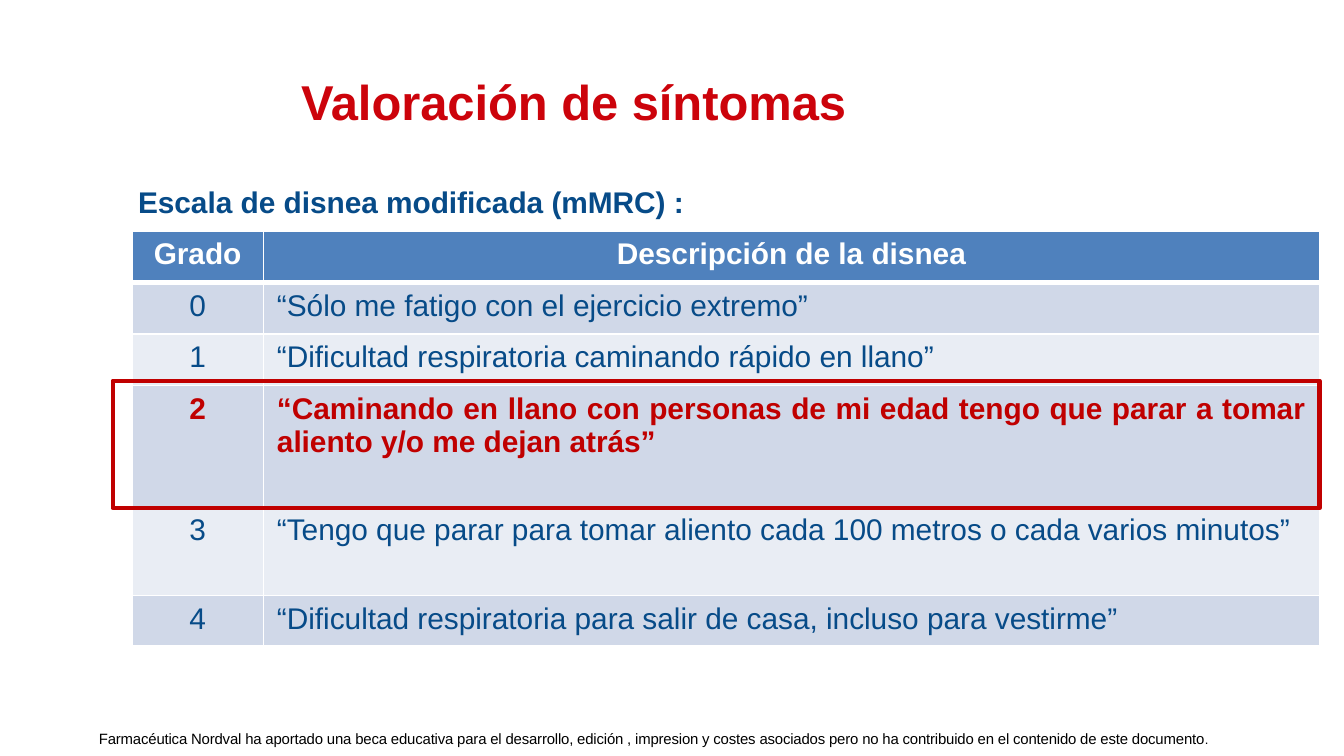
import pptx
import pptx.dml.color
import pptx.enum.shapes
import pptx.enum.text
import pptx.oxml
import pptx.oxml.ns
import pptx.util
from pptx.util import Cm

ALIGN = pptx.enum.text.PP_ALIGN
ANCHOR = pptx.enum.text.MSO_ANCHOR
COLORS = {
    "title": "CC030B",
    "navy": "074B88",
    "alert": "C00000",
    "header": "4F81BD",
    "band_dark": "D0D8E8",
    "band_light": "E9EDF4",
    "white": "FFFFFF",
    "black": "000000",
    "ink": "00050A",
}
HEADER = ("Grado", "Descripción de la disnea")
GRADES = [
    "“Sólo me fatigo con el ejercicio extremo”",
    "“Dificultad respiratoria caminando rápido en llano”",
    "“Caminando en llano con personas de mi edad tengo que parar a tomar "
    "aliento y/o me dejan atrás”",
    "“Tengo que parar para tomar aliento cada 100 metros o cada varios minutos”",
    "“Dificultad respiratoria para salir de casa, incluso para vestirme”",
]
HIGHLIGHTED = 2
COL_WIDTHS = (2.49, 19.96)
ROW_HEIGHTS = (0.97, 0.97, 0.97, 2.29, 1.68, 0.94)


def rgb(name):
    return pptx.dml.color.RGBColor.from_string(COLORS[name])


def style_run(r, size, color, bold=False):
    r.font.name = "Arial"
    r.font.size = pptx.util.Pt(size)
    r.font.bold = bold
    r.font.color.rgb = rgb(color)


def add_text(slide, box, text, size, color, bold=False, wrap=True):
    tf = slide.shapes.add_textbox(*map(Cm, box)).text_frame
    tf.word_wrap = wrap
    tf.text = text
    style_run(tf.paragraphs[0].runs[0], size, color, bold)
    return tf


def add_title(slide, box):
    tf = add_text(slide, box, "Valoración de síntomas", 26.2, "title", bold=True)
    tf.vertical_anchor = ANCHOR.MIDDLE


def add_footer(slide, box):
    text = ("Farmacéutica Nordval ha aportado una beca educativa para el desarrollo, "
            "edición , impresion y costes asociados pero no ha contribuido en el "
            "contenido de este documento")
    tf = add_text(slide, box, text, 8, "black")
    tf.margin_left = tf.margin_right = tf.margin_bottom = 0
    tf.margin_top = Cm(0.06)
    p = tf.paragraphs[0]
    p.alignment = ALIGN.CENTER
    r = p.add_run()
    r.text = "."
    style_run(r, 7, "ink")
    for r in p.runs:
        r.font._element.set("spc", "-10")


def set_borders(cell, widths):
    """Draw white borders; widths maps lnL, lnR, lnT and lnB to points."""
    tcPr = cell._tc.get_or_add_tcPr()
    for i, (tag, width) in enumerate(widths.items()):
        ln = pptx.oxml.parse_xml(
            f'<a:{tag} {pptx.oxml.ns.nsdecls("a")} w="{pptx.util.Pt(width)}">'
            f'<a:solidFill><a:srgbClr val="{COLORS["white"]}"/></a:solidFill></a:{tag}>')
        tcPr.insert(i, ln)


def add_scale_table(slide, box):
    rows = [HEADER] + [(str(i), text) for i, text in enumerate(GRADES)]
    table = slide.shapes.add_table(len(rows), len(HEADER), *map(Cm, box)).table
    for col, width in zip(table.columns, COL_WIDTHS):
        col.width = Cm(width)
    for i, (texts, height) in enumerate(zip(rows, ROW_HEIGHTS)):
        table.rows[i].height = Cm(height)
        is_header, is_key = i == 0, i == HIGHLIGHTED + 1
        fill = "header" if is_header else "band_dark" if i % 2 else "band_light"
        color = "white" if is_header else "alert" if is_key else "navy"
        for j, text in enumerate(texts):
            cell = table.cell(i, j)
            cell.fill.solid()
            cell.fill.fore_color.rgb = rgb(fill)
            set_borders(cell, {"lnL": 1, "lnR": 1, "lnT": 3 if i == 1 else 1,
                               "lnB": 3 if is_header else 1})
            cell.text = text
            p = cell.text_frame.paragraphs[0]
            if is_header or j == 0:
                p.alignment = ALIGN.CENTER
            else:
                p.alignment = ALIGN.JUSTIFY if i > HIGHLIGHTED else ALIGN.LEFT
            style_run(p.runs[0], 16, color, is_header or is_key)


def add_highlight(slide, box):
    sp = slide.shapes.add_shape(
        pptx.enum.shapes.MSO_SHAPE.RECTANGLE, *map(Cm, box))
    sp.shadow.inherit = False
    sp.fill.background()
    sp.line.color.rgb = rgb("alert")
    sp.line.width = pptx.util.Pt(2.25)


def main():
    prs = pptx.Presentation()
    prs.slide_width, prs.slide_height = Cm(25.4), Cm(14.28)
    slide = prs.slides.add_slide(prs.slide_layouts[6])
    add_footer(slide, (1.14, 13.72, 22.43, 0.38))
    add_title(slide, (5.44, 1.12, 19.96, 1.57))
    add_scale_table(slide, (2.49, 4.37, sum(COL_WIDTHS), sum(ROW_HEIGHTS)))
    add_highlight(slide, (2.13, 7.19, 22.81, 2.41))
    add_text(slide, (2.36, 3.35, 10.97, 0.94), "Escala de disnea modificada (mMRC) :",
             16, "navy", bold=True, wrap=False)
    prs.save("out.pptx")


if __name__ == "__main__":
    main()
